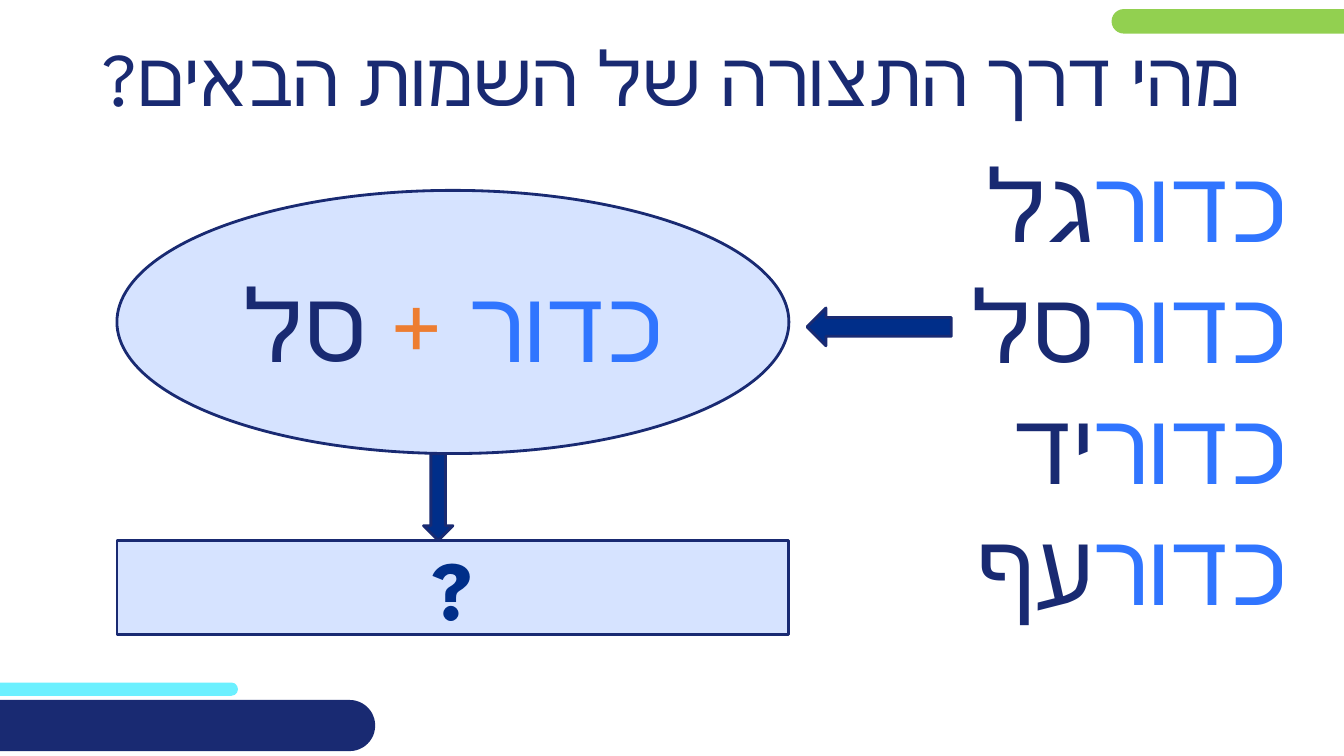
from pptx import Presentation
from pptx.dml.color import RGBColor
from pptx.enum import shapes, text
from pptx.oxml import ns
from pptx.util import Pt
from lxml import etree

HUE = {"navy": "192A72", "blue": "3075FF", "deep": "002E89", "pale": "D6E3FF",
       "cyan": "6CF0FF", "green": "92D050", "orange": "ED7D31"}
FONT = "League Spartan"
KIND = shapes.MSO_SHAPE
ALIGN = text.PP_ALIGN


def tint(name):
    return RGBColor.from_string(HUE[name])


def write(frame, lines, size=72, bold=False, align=ALIGN.CENTER, pitch=None):
    """Each line is a list of (words, colour) pairs, set right to left."""
    frame.word_wrap = True
    frame.vertical_anchor = text.MSO_ANCHOR.MIDDLE
    for i, line in enumerate(lines):
        para = frame.paragraphs[0] if i == 0 else frame.add_paragraph()
        para.alignment = align
        para._p.get_or_add_pPr().set("rtl", "1")
        if pitch:
            para.line_spacing = Pt(pitch)
        for words, hue in line:
            run = para.add_run()
            run.text = words
            font = run.font
            font.name, font.size, font.bold = FONT, Pt(size), bold
            font.color.rgb = tint(hue)
            cs = etree.SubElement(run._r.get_or_add_rPr(), ns.qn("a:cs"))
            cs.set("typeface", FONT)


def draw(slide, kind, box, fill, line=None):
    item = slide.shapes.add_shape(kind, *map(Pt, box))
    item.shadow.inherit = False
    item.fill.solid()
    item.fill.fore_color.rgb = tint(fill)
    if line:
        item.line.color.rgb = tint(line)
        item.line.width = Pt(2)
    else:
        item.line.fill.background()
    return item


def label(slide, box, lines, **style):
    frame = slide.shapes.add_textbox(*map(Pt, box)).text_frame
    frame.margin_top = frame.margin_bottom = 0
    write(frame, lines, **style)


def bars(slide, box):
    """Rounded bars that run off the left and right edges."""
    x, y, w, h = box
    for place, hue in (((x - 72, y + h - 52.5, 242, 9.5), "cyan"),
                       ((x + w - 166, y + 6.5, 418, 17.5), "green"),
                       ((x - 170, y + h - 40, 438, 36.5), "navy")):
        draw(slide, KIND.ROUNDED_RECTANGLE, place, hue).adjustments[0] = 0.5


def names(slide, box):
    ends = ("גל", "סל", "יד", "עף")
    lines = [[("כדור", "blue"), (end, "navy")] for end in ends]
    label(slide, box, lines, align=ALIGN.RIGHT, pitch=box[3] / len(ends))


def split(slide, box):
    """Ellipse with the parts of the word, above the answer box."""
    x, y, w, h = box
    oval, base = 188, 67
    parts = draw(slide, KIND.OVAL, (x, y, w, oval), "pale", "navy")
    write(parts.text_frame,
          [[("כדור ", "blue"), ("+ ", "orange"), ("סל", "navy")]])
    # Arrows into the ellipse and down to the answer
    draw(slide, KIND.LEFT_ARROW, (x + w + 13, y + 84, 103, 27),
         "deep", "navy")
    draw(slide, KIND.DOWN_ARROW, (x + 219, y + oval, 21, h - oval - base),
         "deep", "navy")
    answer = draw(slide, KIND.RECTANGLE, (x, y + h - base, w, base),
                  "pale", "navy")
    write(answer.text_frame, [[("?", "deep")]], size=60, bold=True)


def main():
    deck = Presentation()
    deck.slide_width, deck.slide_height = Pt(960), Pt(540)
    slide = deck.slides.add_slide(deck.slide_layouts[6])
    bars(slide, (0, 0, 960, 540))
    names(slide, (613.5, 101.5, 312, 345.6))
    # Heading
    label(slide, (0, 15, 960, 79),
          [[("מהי דרך התצורה של השמות הבאים?", "navy")]], size=54)
    split(slide, (83.5, 136, 480, 317))
    deck.save("out.pptx")


if __name__ == "__main__":
    main()
